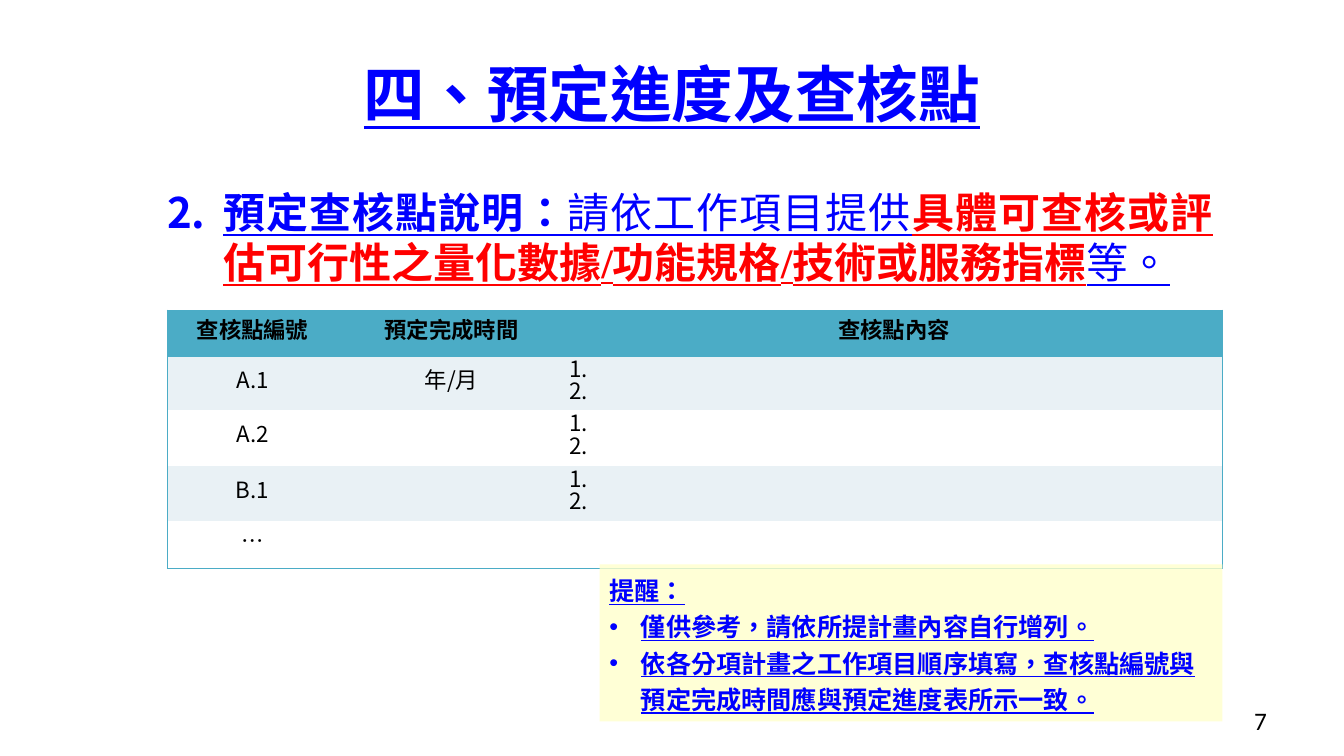
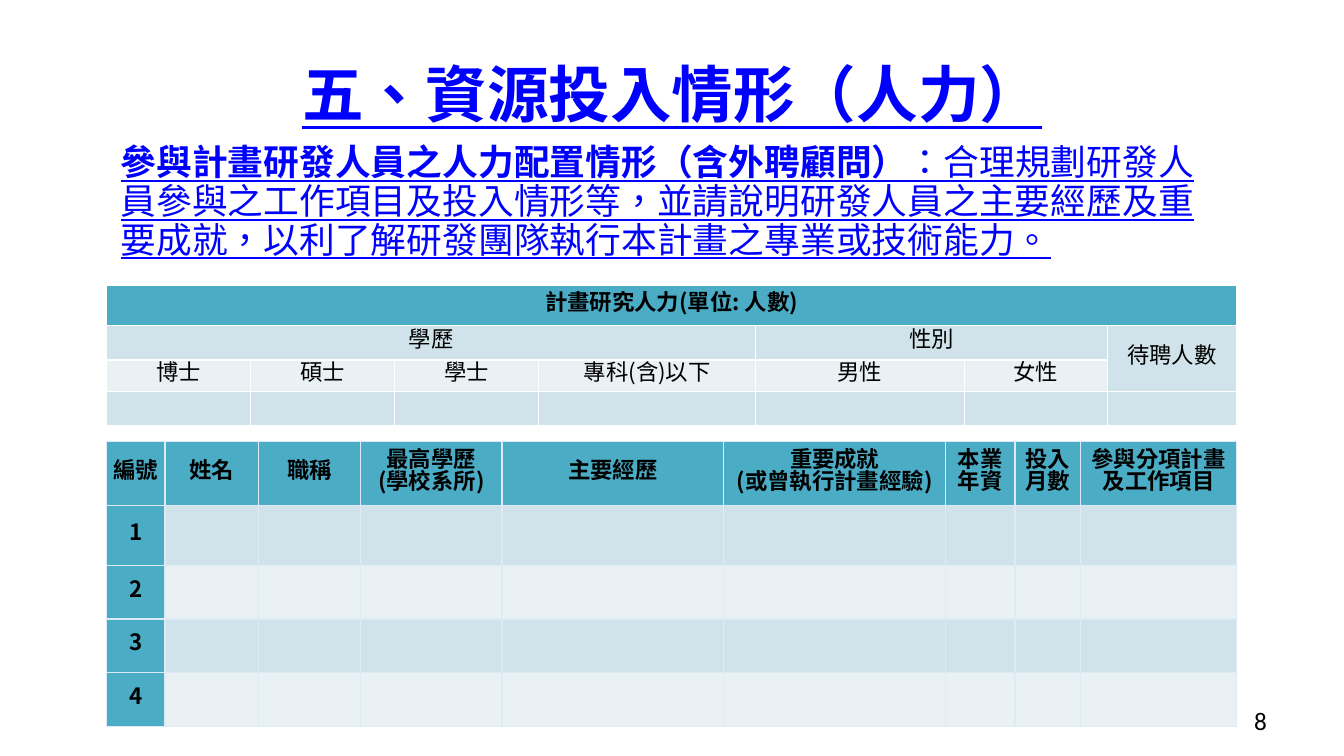
import dataclasses

import lxml.etree
import pptx
import pptx.dml.color
import pptx.enum.lang
import pptx.enum.shapes
import pptx.enum.text
import pptx.oxml.ns
import pptx.util

Cm = pptx.util.Cm
Pt = pptx.util.Pt
ALIGN = pptx.enum.text.PP_ALIGN
ANCHOR = pptx.enum.text.MSO_ANCHOR
EDGES = ("lnL", "lnR", "lnT", "lnB")


@dataclasses.dataclass(frozen=True)
class Theme:
    blue: str = "0000FF"
    red: str = "FF0000"
    black: str = "000000"
    white: str = "FFFFFF"
    teal: str = "4BACC6"
    band_dark: str = "D0E3EA"
    band_light: str = "E9F1F5"
    grid: str = "DEEBF7"
    note: str = "FFFFCC"
    text_font: str = "Times New Roman"
    table_font: str = "Noto Sans CJK SC"
    number_font: str = "Calibri"
    title_size: float = 44
    point_size: float = 30
    intro_size: float = 25.5
    small_size: float = 18
    table_size: float = 16


THEME = Theme()


def rgb(color):
    return pptx.dml.color.RGBColor.from_string(color)


def add_xml(parent, tag, **attributes):
    return lxml.etree.SubElement(parent, pptx.oxml.ns.qn(tag), attributes)


def add_span(para, text, size, color=THEME.blue, bold=True, underline=True, font=THEME.text_font):
    span = para.add_run()
    span.text = text
    span.font.name = font
    span.font.size = Pt(size)
    span.font.bold = bold
    span.font.underline = underline
    span.font.color.rgb = rgb(color)
    span.font.language_id = pptx.enum.lang.MSO_LANGUAGE_ID.TRADITIONAL_CHINESE


def add_box(page, left, top, width, height, anchor=ANCHOR.TOP):
    box = page.shapes.add_textbox(Cm(left), Cm(top), Cm(width), Cm(height))
    box.text_frame.word_wrap = True
    box.text_frame.vertical_anchor = anchor
    return box.text_frame.paragraphs[0]


def set_bullet(para, indent, tag, font, **attributes):
    """Give a paragraph a hanging bullet or number."""
    properties = para._p.get_or_add_pPr()
    properties.set("marL", str(Cm(indent)))
    properties.set("indent", str(-Cm(indent)))
    add_xml(properties, "a:buFont", typeface=font)
    add_xml(properties, tag, **attributes)


def add_page(deck, title, number):
    page = deck.slides.add_slide(deck.slide_layouts[6])
    para = add_box(page, 1.7, 0.76, 30.48, 3.18, ANCHOR.MIDDLE)
    para.alignment = ALIGN.CENTER
    add_span(para, title, THEME.title_size)
    para = add_box(page, 24.28, 17.65, 7.9, 1.02, ANCHOR.MIDDLE)
    para.alignment = ALIGN.RIGHT
    add_span(para, str(number), THEME.small_size, THEME.black, False, False, THEME.number_font)
    return page


def set_borders(cell, colors):
    """Draw the four edges in EDGES order; None leaves an edge bare."""
    properties = cell._tc.get_or_add_tcPr()
    for position, (edge, color) in enumerate(zip(EDGES, colors)):
        line = lxml.etree.Element(pptx.oxml.ns.qn(f"a:{edge}"), w=str(Pt(1)))
        properties.insert(position, line)
        if color:
            add_xml(add_xml(line, "a:solidFill"), "a:srgbClr", val=color)
        else:
            add_xml(line, "a:noFill")


def outline(color, row, column, last_row, last_column):
    on_edge = (column == 0, column == last_column, row == 0, row == last_row)
    return [color if drawn else None for drawn in on_edge]


def fill_cell(cell, text, fill, bold, margin, alignment):
    cell.fill.solid()
    cell.fill.fore_color.rgb = rgb(fill)
    cell.vertical_anchor = ANCHOR.MIDDLE
    cell.margin_left = cell.margin_right = Cm(margin)
    cell.margin_top = cell.margin_bottom = 0
    for index, line in enumerate(text.split("\n")):
        para = cell.text_frame.paragraphs[0] if index == 0 else cell.text_frame.add_paragraph()
        para.alignment = alignment
        para.line_spacing = Pt(THEME.table_size)
        if line:
            add_span(para, line, THEME.table_size, THEME.black, bold, False, THEME.table_font)


def add_grid(page, left, top, widths, heights, texts, bands, border, margin=0.05,
             merges=(), header_column=False, outline_only=False, left_column=None):
    """Add a table: teal header row, body rows alternating between the bands."""
    frame = page.shapes.add_table(len(heights), len(widths), Cm(left), Cm(top),
                                  Cm(sum(widths)), Cm(sum(heights)))
    table = frame.table
    table.first_row = table.horz_banding = False
    for column, width in zip(table.columns, widths):
        column.width = Cm(width)
    for row, height in zip(table.rows, heights):
        row.height = Cm(height)
    for first, last in merges:
        table.cell(*first).merge(table.cell(*last))
    for r in range(len(heights)):
        for c in range(len(widths)):
            cell = table.cell(r, c)
            header = r == 0 or (header_column and c == 0)
            fill = THEME.teal if header else bands[(r - 1) % 2]
            alignment = ALIGN.LEFT if r and c == left_column else ALIGN.CENTER
            fill_cell(cell, texts.get((r, c), ""), fill, header, margin, alignment)
            colors = [border] * 4
            if outline_only:
                colors = outline(border, r, c, len(heights) - 1, len(widths) - 1)
            set_borders(cell, colors)


def row_texts(row, texts):
    return {(row, column): text for column, text in enumerate(texts)}


def add_reminder(page, heading, items):
    box = page.shapes.add_shape(pptx.enum.shapes.MSO_SHAPE.RECTANGLE,
                                Cm(15.11), Cm(14.22), Cm(15.7), Cm(3.96))
    box.shadow.inherit = False
    box.line.fill.background()
    box.fill.solid()
    box.fill.fore_color.rgb = rgb(THEME.note)
    color = box._element.spPr.find(".//" + pptx.oxml.ns.qn("a:srgbClr"))
    add_xml(color, "a:alpha", val="80000")
    frame = box.text_frame
    frame.word_wrap = True
    frame.vertical_anchor = ANCHOR.TOP
    for index, text in enumerate([heading, *items]):
        para = frame.add_paragraph() if index else frame.paragraphs[0]
        para.alignment = ALIGN.LEFT
        para.line_spacing = 1.2
        if index:
            set_bullet(para, 0.79, "a:buChar", "Arial", char="•")
        add_span(para, text, THEME.small_size)


def build_checkpoints(deck):
    page = add_page(deck, "四、預定進度及查核點", 7)
    para = add_box(page, 3.96, 4.57, 26.85, 3)
    para.alignment = ALIGN.JUSTIFY
    para.space_before = Pt(7)
    set_bullet(para, 1.42, "a:buAutoNum", THEME.table_font, type="arabicPeriod", startAt="2")
    add_span(para, "預定查核點說明：", THEME.point_size)
    add_span(para, "請依工作項目提供", THEME.point_size, bold=False)
    add_span(para, "具體可查核或評估可行性之量化數據/功能規格/技術或服務指標",
             THEME.point_size, THEME.red)
    add_span(para, "等。", THEME.point_size, bold=False)
    texts = {
        **row_texts(0, ("查核點編號", "預定完成時間", "查核點內容")),
        **row_texts(1, ("A.1", "年/月", "1.\n2.")),
        **row_texts(2, ("A.2", "", "1.\n2.")),
        **row_texts(3, ("B.1", "", "1.\n2.")),
        (4, 0): "…",
    }
    add_grid(page, 4.22, 7.82, (4.29, 5.74, 16.56), (1.17, 1.35, 1.4, 1.4, 1.19), texts,
             (THEME.band_light, THEME.white), THEME.teal, margin=0.1,
             outline_only=True, left_column=2)
    add_reminder(page, "提醒：", (
        "僅供參考，請依所提計畫內容自行增列。",
        "依各分項計畫之工作項目順序填寫，查核點編號與預定完成時間應與預定進度表所示一致。"))


def build_staffing(deck):
    page = add_page(deck, "五、資源投入情形（人力）", 8)
    para = add_box(page, 2.79, 3.53, 28.27, 3.86)
    para.line_spacing = 0.9
    para.space_before = Pt(7)
    add_span(para, "參與計畫研發人員之人力配置情形（含外聘顧問）", THEME.intro_size)
    add_span(para, "：合理規劃研發人員參與之工作項目及投入情形等，並請說明研發人員之主要經歷及"
             "重要成就，以利了解研發團隊執行本計畫之專業或技術能力。", THEME.intro_size, bold=False)
    bands = (THEME.band_dark, THEME.band_light)
    staff = {
        **row_texts(0, ("編號", "姓名", "職稱", "最高學歷\n(學校系所)", "主要經歷",
                        "重要成就\n(或曾執行計畫經驗)", "本業年資", "投入月數",
                        "參與分項計畫及工作項目")),
        **{(number, 0): str(number) for number in range(1, 5)},
    }
    add_grid(page, 2.69, 11.13, (1.47, 2.36, 2.57, 3.56, 5.59, 5.59, 1.75, 1.65, 3.94),
             (1.6, 1.52, 1.35, 1.35, 1.35), staff, bands, THEME.grid, header_column=True)
    headcount = {
        (0, 0): "計畫研究人力(單位: 人數)",
        (1, 0): "學歷", (1, 4): "性別", (1, 6): "待聘人數",
        **row_texts(2, ("博士", "碩士", "學士", "專科(含)以下", "男性", "女性")),
    }
    merges = (((0, 0), (0, 6)), ((1, 0), (1, 3)), ((1, 4), (1, 5)), ((1, 6), (2, 6)))
    add_grid(page, 2.69, 7.19, (3.63, 3.63, 3.63, 5.46, 5.26, 3.61, 3.25),
             (1.02, 0.86, 0.79, 0.86), headcount, bands, THEME.white, merges=merges)


def main():
    deck = pptx.Presentation()
    deck.slide_width = Cm(33.87)
    deck.slide_height = Cm(19.05)
    build_checkpoints(deck)
    build_staffing(deck)
    deck.save("out.pptx")


if __name__ == "__main__":
    main()
